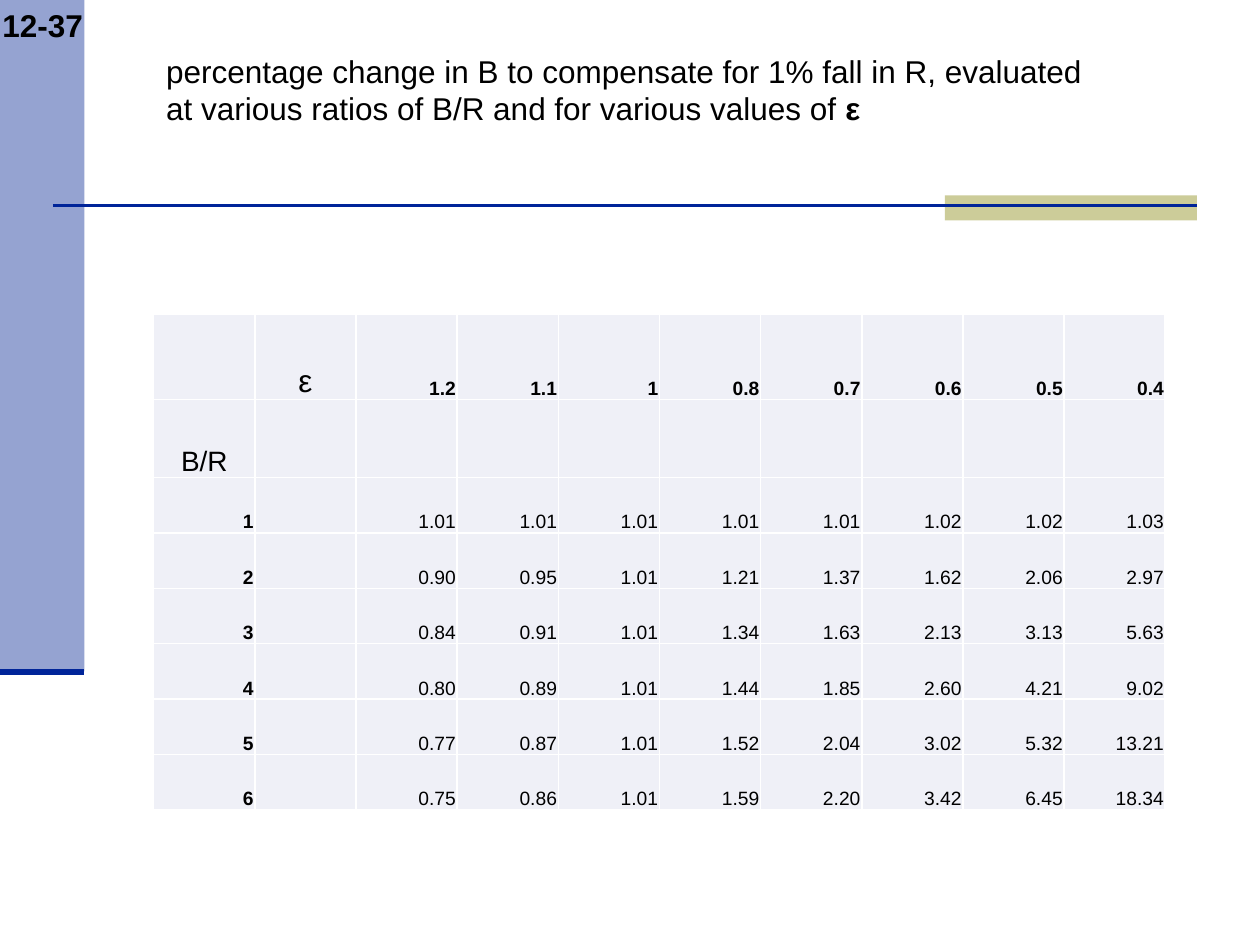
import pptx
import pptx.dml.color
import pptx.enum.shapes
import pptx.enum.text
import pptx.oxml.ns
import pptx.util
from lxml import etree
from pptx.util import Inches

RGBColor = pptx.dml.color.RGBColor
Align = pptx.enum.text.PP_ALIGN

BLACK = RGBColor(0x00, 0x00, 0x00)
WHITE = RGBColor(0xFF, 0xFF, 0xFF)
PERIWINKLE = RGBColor(0x95, 0xA3, 0xD1)
KHAKI = RGBColor(0xCC, 0xCC, 0x99)
NAVY = RGBColor(0x00, 0x24, 0x99)
PALE = RGBColor(0xEF, 0xF0, 0xF7)

TITLE = ("percentage change in B to compensate for 1% fall in R, "
         "evaluated at various ratios of B/R and for various values of ")
EPSILONS = ["1.2", "1.1", "1", "0.8", "0.7", "0.6", "0.5", "0.4"]
CHANGES = [
    ["1.01", "1.01", "1.01", "1.01", "1.01", "1.02", "1.02", "1.03"],
    ["0.90", "0.95", "1.01", "1.21", "1.37", "1.62", "2.06", "2.97"],
    ["0.84", "0.91", "1.01", "1.34", "1.63", "2.13", "3.13", "5.63"],
    ["0.80", "0.89", "1.01", "1.44", "1.85", "2.60", "4.21", "9.02"],
    ["0.77", "0.87", "1.01", "1.52", "2.04", "3.02", "5.32", "13.21"],
    ["0.75", "0.86", "1.01", "1.59", "2.20", "3.42", "6.45", "18.34"],
]
ROWS = [["", "ε"] + EPSILONS, ["B/R"] + [""] * 9]
ROWS += [[str(ratio), ""] + values for ratio, values in enumerate(CHANGES, 1)]
ROW_HEIGHTS = [0.68, 0.62] + [0.44] * len(CHANGES)
LABEL_SIZES = {"ε": 18, "B/R": 16}


class SlideBuilder:
    font = "Arial"
    text_color = BLACK

    def __init__(self, slide):
        self.slide = slide

    def format_span(self, span, size, bold=False):
        span.font.name = self.font
        span.font.size = pptx.util.Pt(size)
        span.font.bold = bold
        span.font.color.rgb = self.text_color

    def rectangle(self, left, top, width, height, color):
        shape = self.slide.shapes.add_shape(
            pptx.enum.shapes.MSO_SHAPE.RECTANGLE,
            Inches(left), Inches(top), Inches(width), Inches(height))
        shape.shadow.inherit = False
        shape.fill.solid()
        shape.fill.fore_color.rgb = color
        shape.line.fill.background()

    def rule(self, left, right, y, weight):
        line = self.slide.shapes.add_connector(
            pptx.enum.shapes.MSO_CONNECTOR.STRAIGHT,
            Inches(left), Inches(y), Inches(right), Inches(y))
        line.line.color.rgb = NAVY
        line.line.width = pptx.util.Pt(weight)
        etree.SubElement(line._element.spPr, pptx.oxml.ns.qn("a:effectLst"))

    def text(self, left, top, width, height, spans, wrap=True):
        """Add a one-paragraph box; spans are (words, bold) pairs."""
        box = self.slide.shapes.add_textbox(
            Inches(left), Inches(top), Inches(width), Inches(height))
        box.text_frame.word_wrap = wrap
        para = box.text_frame.paragraphs[0]
        for words, bold in spans:
            span = para.add_run()
            span.text = words
            self.format_span(span, 18, bold)

    def table(self, left, top, width, rows, heights):
        table = self.slide.shapes.add_table(
            len(rows), len(rows[0]), Inches(left), Inches(top),
            Inches(width), Inches(sum(heights))).table
        table.first_row = table.horz_banding = False
        for column in table.columns:
            column.width = Inches(width / len(rows[0]))
        for r, values in enumerate(rows):
            table.rows[r].height = Inches(heights[r])
            for c, value in enumerate(values):
                self.fill_cell(table.cell(r, c), value, bold=r == 0 or c == 0)

    def fill_cell(self, cell, value, bold):
        self.border(cell)
        cell.fill.solid()
        cell.fill.fore_color.rgb = PALE
        if not value:
            return
        cell.vertical_anchor = pptx.enum.text.MSO_ANCHOR.BOTTOM
        cell.margin_left = cell.margin_right = cell.margin_top = Inches(0.01)
        cell.margin_bottom = 0
        cell.text_frame.text = value
        is_label = value in LABEL_SIZES
        para = cell.text_frame.paragraphs[0]
        para.alignment = Align.CENTER if is_label else Align.RIGHT
        self.format_span(para.runs[0], LABEL_SIZES.get(value, 11),
                         bold and not is_label)

    def border(self, cell):
        qn = pptx.oxml.ns.qn
        properties = cell._tc.get_or_add_tcPr()
        for side in ("lnL", "lnR", "lnT", "lnB"):
            edge = etree.SubElement(properties, qn("a:" + side),
                                    w=str(pptx.util.Pt(1)))
            fill = etree.SubElement(edge, qn("a:solidFill"))
            etree.SubElement(fill, qn("a:srgbClr"), val=str(WHITE))


def main():
    deck = pptx.Presentation()
    deck.slide_width, deck.slide_height = Inches(10), Inches(7.5)
    page = SlideBuilder(deck.slides.add_slide(deck.slide_layouts[6]))
    page.rectangle(0, 0, 0.67, 5.33, PERIWINKLE)
    page.rectangle(7.5, 1.55, 2, 0.2, KHAKI)
    page.rule(0.42, 9.5, 1.63, 1.5)
    page.rule(0, 0.67, 5.33, 3.5)
    page.text(-0.08, 0, 0.88, 0.4, [("12-37", True)], wrap=False)
    page.text(1.22, 0.36, 7.72, 1.01, [(TITLE, False), ("ε", True)])
    page.table(1.22, 2.49, 8.03, ROWS, ROW_HEIGHTS)
    deck.save("out.pptx")


if __name__ == "__main__":
    main()
